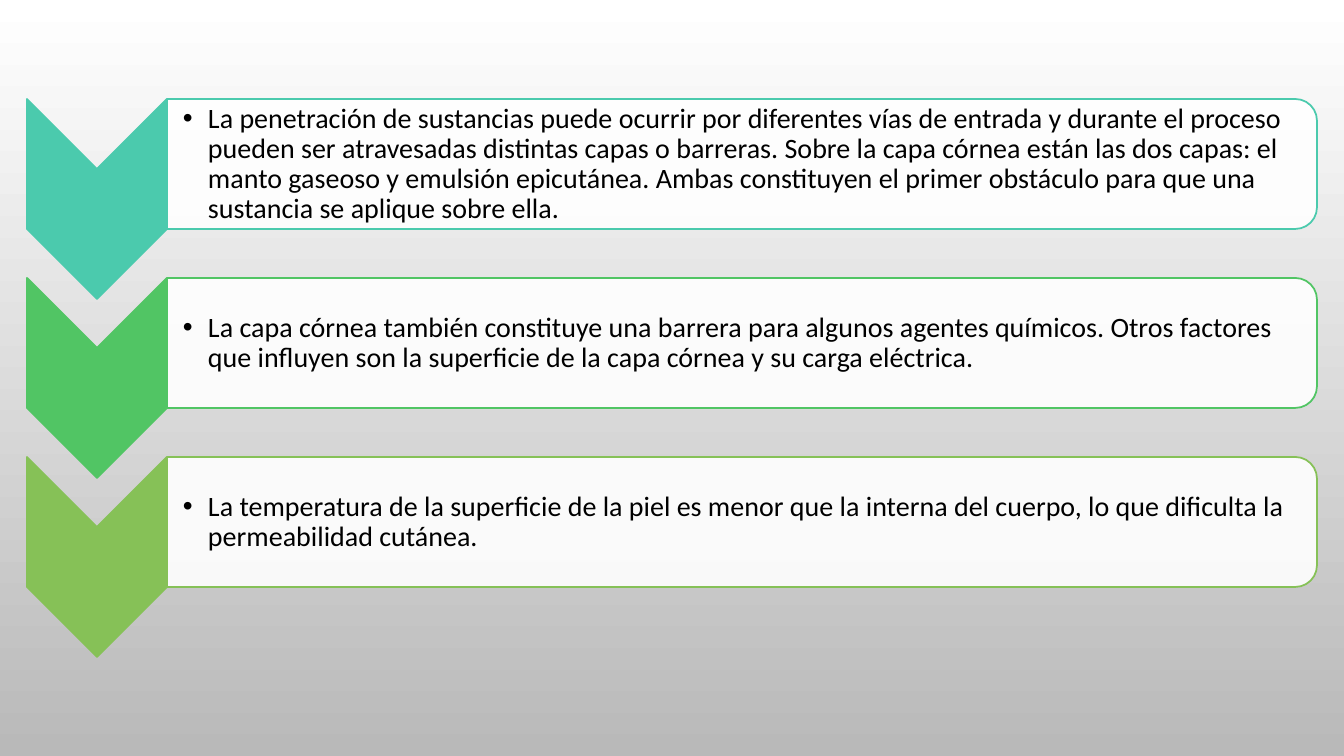
from lxml.etree import SubElement
from pptx import Presentation
from pptx.dml.color import RGBColor
from pptx.enum.shapes import MSO_SHAPE as Shape
from pptx.enum.text import MSO_ANCHOR as Anchor
from pptx.oxml.ns import qn
from pptx.util import Emu, Pt

EMU_PER_PX = 12192000 / 1344
WHITE = RGBColor(0xFF, 0xFF, 0xFF)
GREY = RGBColor(0xB9, 0xB9, 0xB9)
BLACK = RGBColor(0x00, 0x00, 0x00)
TEAL = RGBColor(0x4B, 0xCA, 0xAD)
GREEN = RGBColor(0x51, 0xC5, 0x64)
LIME = RGBColor(0x86, 0xC1, 0x57)

BARRIERS = [
    (TEAL, "La penetración de sustancias puede ocurrir por diferentes vías de entrada y durante "
           "el proceso pueden ser atravesadas distintas capas o barreras. Sobre la capa córnea "
           "están las dos capas: el manto gaseoso y emulsión epicutánea. Ambas constituyen el "
           "primer obstáculo para que una sustancia se aplique sobre ella."),
    (GREEN, "La capa córnea también constituye una barrera para algunos agentes químicos. Otros "
            "factores que influyen son la superficie de la capa córnea y su carga eléctrica."),
    (LIME, "La temperatura de la superficie de la piel es menor que la interna del cuerpo, lo "
           "que dificulta la permeabilidad cutánea."),
]
FIRST_TOP = 99
ROW_PITCH = 179


def px(length):
    return Emu(round(length * EMU_PER_PX))


class SlideBuilder:
    font_name = "Calibri"
    font_size = Pt(20)
    line_width = Pt(1.25)

    def __init__(self, page):
        self.page = page

    def background(self, top_color, bottom_color):
        fill = self.page.background.fill
        fill.gradient()
        fill.gradient_angle = 270
        for stop, color, position in zip(fill.gradient_stops, (top_color, bottom_color), (0, 1)):
            stop.color.rgb = color
            stop.position = position

    def turned_shape(self, kind, left, top, width, height, fill_color, line_color):
        shape = self.page.shapes.add_shape(
            kind,
            px(left + (width - height) / 2), px(top + (height - width) / 2),
            px(height), px(width),
        )
        shape.rotation = 90
        shape.shadow.inherit = False
        shape.fill.solid()
        shape.fill.fore_color.rgb = fill_color
        shape.line.color.rgb = line_color
        shape.line.width = self.line_width
        return shape

    def chevron(self, left, top, width, height, color):
        self.turned_shape(Shape.CHEVRON, left, top, width, height, color, color)

    def panel(self, left, top, width, height, color):
        shape = self.turned_shape(
            Shape.ROUND_2_SAME_RECTANGLE, left, top, width, height, WHITE, color)
        fill_element = shape._element.spPr.find(qn("a:solidFill"))
        SubElement(fill_element[0], qn("a:alpha"), val="90000")

    def bullet_text(self, left, top, width, height, text):
        box = self.page.shapes.add_textbox(px(left), px(top), px(width), px(height))
        frame = box.text_frame
        frame.word_wrap = True
        frame.vertical_anchor = Anchor.MIDDLE
        frame.margin_left = px(16)
        frame.margin_top = frame.margin_right = frame.margin_bottom = px(1)
        frame.text = text
        para = frame.paragraphs[0]
        para.level = 1
        properties = para._p.get_or_add_pPr()
        properties.set("marL", str(px(25)))
        properties.set("indent", str(px(-25)))
        SubElement(properties, qn("a:buFont"), typeface="Arial")
        SubElement(properties, qn("a:buChar"), char="•")
        para.line_spacing = 0.9
        para.space_after = Pt(3)
        span = para.runs[0]
        span.font.name = self.font_name
        span.font.size = self.font_size
        span.font.color.rgb = BLACK


def main():
    deck = Presentation()
    deck.slide_width = px(1344)
    deck.slide_height = px(756)
    builder = SlideBuilder(deck.slides.add_slide(deck.slide_layouts[6]))
    builder.background(WHITE, GREY)
    for row, (color, text) in enumerate(BARRIERS):
        top = FIRST_TOP + row * ROW_PITCH
        builder.chevron(27, top, 140, 200, color)
        builder.panel(167, top, 1150, 130, color)
        builder.bullet_text(167, top + 7, 1144, 117, text)
    deck.save("out.pptx")


if __name__ == "__main__":
    main()
